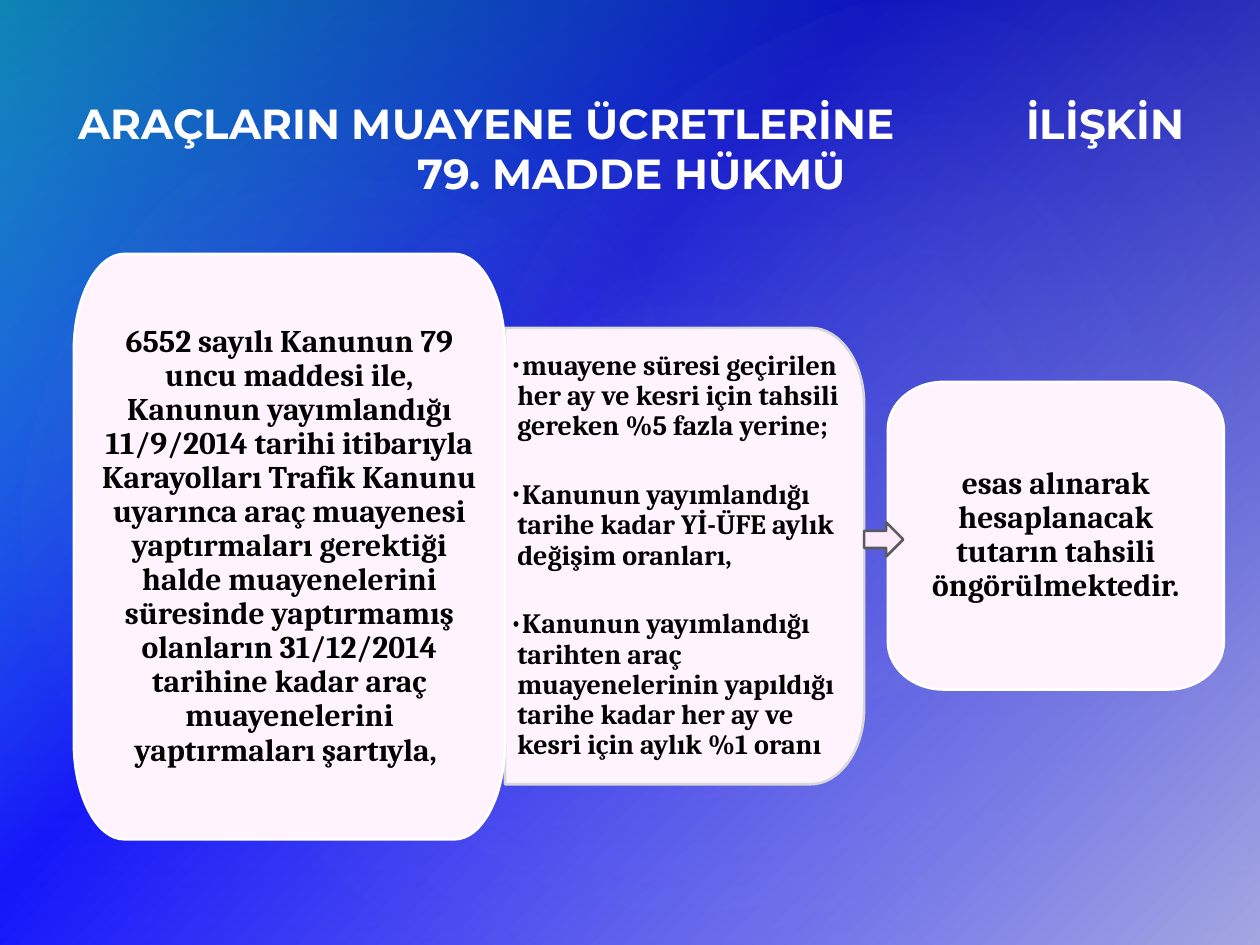
from dataclasses import dataclass

from lxml.etree import SubElement
from pptx import Presentation
from pptx.dml.color import RGBColor
from pptx.enum.shapes import MSO_SHAPE
from pptx.enum.text import MSO_ANCHOR, MSO_AUTO_SIZE, PP_ALIGN
from pptx.oxml.ns import qn
from pptx.util import Cm, Pt

WHITE = RGBColor(0xFF, 0xFF, 0xFF)
BLACK = RGBColor(0, 0, 0)
PANEL_FILL = RGBColor(0xFF, 0xF3, 0xFD)
LIST_LINE = RGBColor(0xD7, 0xD7, 0xD8)
ARROW_FILL = RGBColor(0xFF, 0xEB, 0xFC)
ARROW_LINE = RGBColor(0x5A, 0x5B, 0x5D)
SKY = RGBColor(0x00, 0xB0, 0xF0)
BLUE = RGBColor(0x00, 0x00, 0xFF)
LAVENDER = RGBColor(0xA0, 0xA1, 0xE3)
SLATE = RGBColor(0x28, 0x37, 0x4A)
MIST = RGBColor(0xCD, 0xD7, 0xD9)
STEEL = RGBColor(0x91, 0xA7, 0xC4)
ARC_PULL = 0.55  # share of the radius at which a quarter ellipse has its control point


@dataclass
class Stop:
    position: int
    color: RGBColor
    opacity: int = 100


@dataclass
class Glow:
    left: float
    top: float
    width: float
    height: float
    rotation: float
    opacity: int


@dataclass
class Panel:
    left: float
    top: float
    width: float
    height: float
    radius_x: float
    radius_y: float
    margins: tuple[float, float, float, float]
    texts: list[str]
    size: int = 18
    line: RGBColor = WHITE
    is_list: bool = False


GLOWS = [
    Glow(3.81, 2.9, 20.12, 15.85, 328.7, 7),
    Glow(-0.76, 3.25, 15.39, 12.45, 294.3, 8),
    Glow(9.09, 0.33, 18.01, 13.21, 328.7, 8),
]

PANELS = [
    Panel(10.18, 6.61, 7.24, 9.2, 1.08, 1.53, (0.1, 0.28, 0.33, 0.28), [
        "muayene süresi geçirilen her ay ve kesri için tahsili gereken %5 fazla yerine;",
        "Kanunun yayımlandığı tarihe kadar Yİ-ÜFE aylık değişim oranları,",
        "Kanunun yayımlandığı tarihten araç muayenelerinin yapıldığı tarihe kadar "
        "her ay ve kesri için aylık %1 oranı",
    ], size=16, line=LIST_LINE, is_list=True),
    Panel(1.49, 5.12, 8.69, 11.8, 1.02, 1.95, (0.43, 0.36, 0.43, 0.36), [
        "6552 sayılı Kanunun 79 uncu maddesi ile, Kanunun yayımlandığı 11/9/2014 "
        "tarihi itibarıyla Karayolları Trafik Kanunu uyarınca araç muayenesi "
        "yaptırmaları gerektiği halde muayenelerini süresinde yaptırmamış olanların "
        "31/12/2014 tarihine kadar araç muayenelerini yaptırmaları şartıyla, ",
    ]),
    Panel(17.9, 7.7, 6.77, 6.2, 1.12, 0.96, (0.46, 0.38, 0.46, 0.38), [
        "esas alınarak hesaplanacak tutarın tahsili öngörülmektedir.",
    ]),
]


def set_gradient(fill, owner, stops: list[Stop], angle: int | None) -> None:
    """Fill with a linear gradient, or a circular one when angle is None."""
    fill.gradient()
    gradient = owner.find(".//" + qn("a:gradFill"))
    for child in list(gradient):
        gradient.remove(child)
    stop_list = SubElement(gradient, qn("a:gsLst"))
    for stop in stops:
        node = SubElement(stop_list, qn("a:gs"), pos=str(stop.position * 1000))
        color = SubElement(node, qn("a:srgbClr"), val=str(stop.color))
        if stop.opacity < 100:
            SubElement(color, qn("a:alpha"), val=str(stop.opacity * 1000))
    if angle is None:
        circle = SubElement(gradient, qn("a:path"), path="circle")
        SubElement(circle, qn("a:fillToRect"), l="50000", t="50000", r="50000", b="50000")
    else:
        SubElement(gradient, qn("a:lin"), ang=str(angle * 60000), scaled="0")


def draw_backdrop(presentation, slide) -> None:
    """Colour the background and put the veil and glows on the slide master."""
    set_gradient(slide.background.fill, slide.element,
                 [Stop(0, SKY), Stop(40, BLUE), Stop(100, LAVENDER)], 45)
    veil = slide.shapes.add_shape(MSO_SHAPE.RECTANGLE, 0, 0,
                                  presentation.slide_width, presentation.slide_height)
    set_gradient(veil.fill, veil.element, [Stop(0, SLATE, 36), Stop(100, MIST, 10)], 90)
    layers = [veil]
    for glow in GLOWS:
        ellipse = slide.shapes.add_shape(MSO_SHAPE.OVAL, Cm(glow.left), Cm(glow.top),
                                         Cm(glow.width), Cm(glow.height))
        ellipse.rotation = glow.rotation
        set_gradient(ellipse.fill, ellipse.element,
                     [Stop(0, STEEL, glow.opacity), Stop(58, MIST, 0)], None)
        layers.append(ellipse)
    master_tree = presentation.slide_master.shapes.element
    for index, layer in enumerate(layers):
        layer.shadow.inherit = False
        layer.line.fill.background()
        layer.element.nvSpPr.cNvPr.set("id", str(100 + index))
        master_tree.insert(2 + index, layer.element)


def add_run(paragraph, text: str, font: str, size: int, color: RGBColor):
    run = paragraph.add_run()
    run.text = text
    run.font.name = font
    run.font.size = Pt(size)
    run.font.bold = True
    run.font.color.rgb = color
    return run


def write_title(slide) -> None:
    title = slide.shapes.title
    title.left, title.top, title.width, title.height = Cm(1.3), Cm(1.12), Cm(22.86), Cm(3)
    frame = title.text_frame
    frame.auto_size = MSO_AUTO_SIZE.NONE
    frame.word_wrap = True
    frame.vertical_anchor = MSO_ANCHOR.BOTTOM
    frame.margin_left = frame.margin_right = Cm(0.2)
    paragraph = frame.paragraphs[0]
    paragraph.alignment = PP_ALIGN.CENTER
    add_run(paragraph, "ARAÇLARIN MUAYENE ÜCRETLERİNE", "Montserrat", 24, WHITE)
    gap = add_run(paragraph, " ", "Montserrat", 24, WHITE)
    gap.font._element.set("spc", "6850")
    add_run(paragraph, "İLİŞKİN 79. MADDE HÜKMÜ", "Montserrat", 24, WHITE)


def build_panel_shape(slide, panel: Panel):
    """Rectangle with elliptical corners; a list panel is square on the left."""
    right, bottom = panel.left + panel.width, panel.top + panel.height
    corners = [(right, bottom, 1, 1), (panel.left, bottom, -1, 1),
               (panel.left, panel.top, -1, -1), (right, panel.top, 1, -1)]
    points, arcs = [], {}
    for x, y, side_x, side_y in corners:
        if panel.is_list and side_x < 0:
            points.append((Cm(x), Cm(y)))
            continue
        beside = (Cm(x), Cm(y - side_y * panel.radius_y))
        along = (Cm(x - side_x * panel.radius_x), Cm(y))
        ends = (beside, along) if side_x == side_y else (along, beside)
        points.extend(ends)
        arcs[len(points) - 1] = [
            tuple(round(end[axis] + ARC_PULL * ((Cm(x), Cm(y))[axis] - end[axis]))
                  for axis in (0, 1)) for end in ends]
    builder = slide.shapes.build_freeform(*points[0])
    builder.add_line_segments(points[1:], close=True)
    shape = builder.convert_to_shape()
    segments = list(shape.element.find(".//" + qn("a:path")))
    for index, controls in arcs.items():
        segment = segments[index]
        segment.tag = qn("a:cubicBezTo")
        for position, (x, y) in enumerate(controls):
            control = SubElement(segment, qn("a:pt"),
                                 x=str(x - shape.left), y=str(y - shape.top))
            segment.insert(position, control)
    return shape


def add_bullet(paragraph) -> None:
    properties = paragraph._p.get_or_add_pPr()
    properties.set("marL", str(Cm(0.15)))
    properties.set("indent", str(-Cm(0.15)))
    SubElement(properties, qn("a:buFont"), typeface="Cambria")
    SubElement(properties, qn("a:buChar"), char="•")


def paint(shape, fill: RGBColor, line: RGBColor) -> None:
    shape.shadow.inherit = False
    shape.fill.solid()
    shape.fill.fore_color.rgb = fill
    shape.line.color.rgb = line
    shape.line.width = Pt(1.5)


def draw_panel(slide, panel: Panel) -> None:
    shape = build_panel_shape(slide, panel)
    paint(shape, PANEL_FILL, panel.line)
    frame = shape.text_frame
    frame.word_wrap = True
    frame.vertical_anchor = MSO_ANCHOR.MIDDLE
    (frame.margin_left, frame.margin_top,
     frame.margin_right, frame.margin_bottom) = map(Cm, panel.margins)
    for index, text in enumerate(panel.texts):
        paragraph = frame.add_paragraph() if index else frame.paragraphs[0]
        paragraph.alignment = PP_ALIGN.LEFT if panel.is_list else PP_ALIGN.CENTER
        paragraph.line_spacing = 0.9
        if index < len(panel.texts) - 1:
            paragraph.space_after = Pt(22)
        if panel.is_list:
            add_bullet(paragraph)
        add_run(paragraph, text, "Cambria", panel.size, BLACK)


if __name__ == "__main__":
    presentation = Presentation()
    presentation.slide_width, presentation.slide_height = Cm(25.4), Cm(19.05)
    slide = presentation.slides.add_slide(presentation.slide_layouts[5])
    draw_backdrop(presentation, slide)
    write_title(slide)
    for panel in PANELS:
        draw_panel(slide, panel)
    arrow = slide.shapes.add_shape(MSO_SHAPE.RIGHT_ARROW, Cm(17.42), Cm(10.53), Cm(0.79), Cm(0.69))
    paint(arrow, ARROW_FILL, ARROW_LINE)
    presentation.save("out.pptx")
